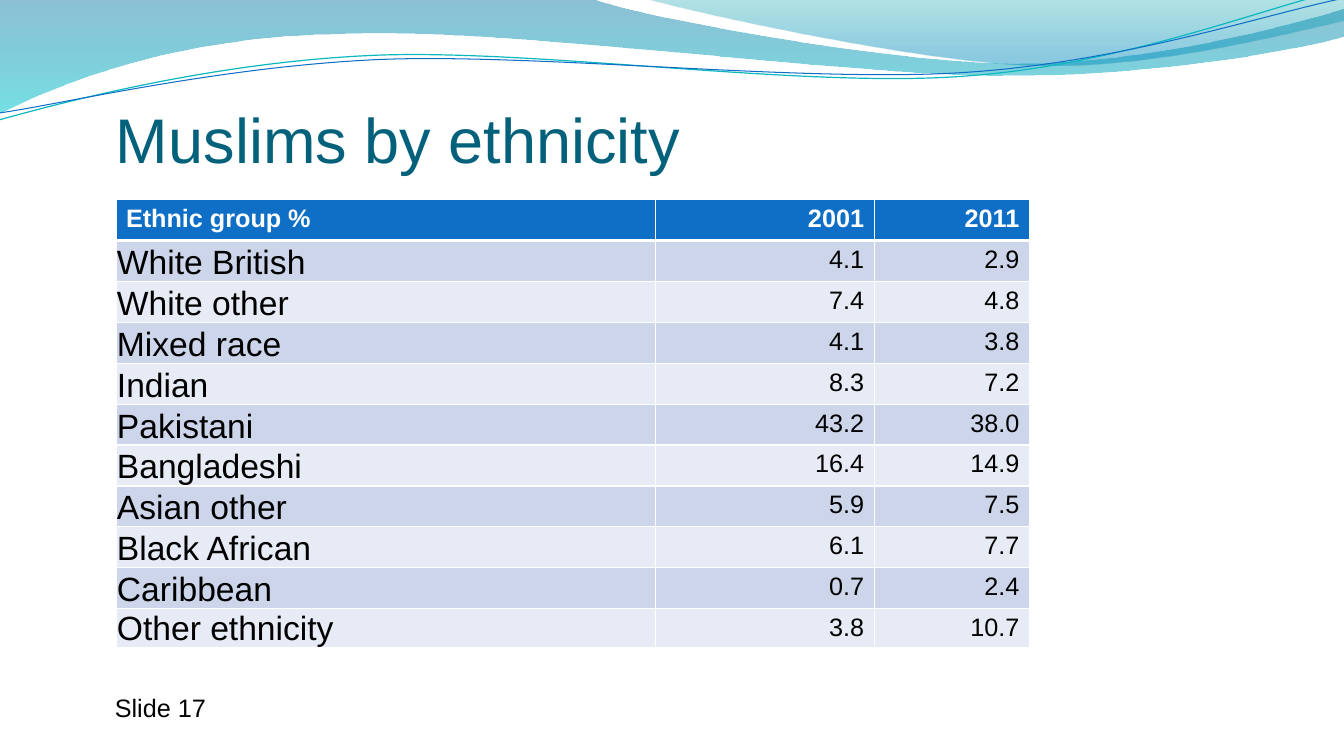
from math import cos, radians, sin

from lxml import etree
from pptx import Presentation
from pptx.dml.color import RGBColor
from pptx.enum.text import MSO_ANCHOR, MSO_AUTO_SIZE, PP_ALIGN
from pptx.oxml import parse_xml
from pptx.oxml.ns import nsdecls, qn
from pptx.util import Pt

PX = 9144
FONT = "Arial"
LEFT, RIGHT = PP_ALIGN.LEFT, PP_ALIGN.RIGHT
TOP, BOTTOM = MSO_ANCHOR.TOP, MSO_ANCHOR.BOTTOM
GROW = MSO_AUTO_SIZE.SHAPE_TO_FIT_TEXT
TILT = 2.7


def rgb(color):
    return RGBColor.from_string(color)


def write(paragraph, text, size, color, bold=False, align=LEFT):
    paragraph.alignment = align
    run = paragraph.add_run()
    run.text = text
    run.font.name = FONT
    run.font.size = Pt(size)
    run.font.bold = bold
    run.font.color.rgb = rgb(color)


deck = Presentation()
deck.slide_width, deck.slide_height = 1333 * PX, 750 * PX
slide = deck.slides.add_slide(deck.slide_layouts[5])

waves = [
    ((0, 0), [
        [(587, -1)],
        [(634, 17), (885, 63), (1011, 63)],
        [(1138, 63), (1278, 26), (1333, 9)],
        [(1335, 36)],
        [(1311, 44), (1160, 76), (994, 75)],
        [(829, 75), (509, 28), (343, 34)],
        [(172, 36), (61, 83), (-1, 113)],
        [(0, 0)],
    ], [(0, "0074A1", 45), (1, "00C6CF", 55)], None, None),
    ((639, -1), [
        [(679, 11), (909, 62), (1025, 65)],
        [(1141, 69), (1282, 32), (1333, 21)],
        [(1333, 0)],
        [(639, -1)],
    ], [(0, "00A1A9", 30), (0.8, "008BBF", 45)], None, None),
    ((-1, 119), [
        [(64, 101), (211, 62), (369, 55)],
        [(527, 48), (790, 87), (950, 76)],
        [(1110, 66), (1252, 8), (1331, -10)],
    ], None, ("0AB8BF", 0.85), (665, 58)),
    ((0, 112), [
        [(63, 103), (218, 66), (378, 59)],
        [(537, 53), (796, 82), (955, 72)],
        [(1115, 62), (1255, 14), (1334, -2)],
    ], None, ("0F6FC6", 0.75), (667, 59)),
]
for start, segments, gradient, stroke, pivot in waves:
    points = [start] + [point for segment in segments for point in segment]
    if pivot:
        turn = radians(TILT)
        offsets = [(x - pivot[0], y - pivot[1]) for x, y in points]
        points = [(pivot[0] + dx * cos(turn) - dy * sin(turn),
                   pivot[1] + dx * sin(turn) + dy * cos(turn)) for dx, dy in offsets]
    points = [(round(x * PX), round(y * PX)) for x, y in points]
    builder = slide.shapes.build_freeform(*points[0])
    builder.add_line_segments(points[1:], close=gradient is not None)
    wave = builder.convert_to_shape()
    wave.shadow.inherit = False

    edges = iter(list(wave.element.iter(qn("a:lnTo"))))
    for segment in segments:
        corners = [next(edges) for point in segment]
        if len(corners) == 3:
            curve = etree.Element(qn("a:cubicBezTo"))
            corners[0].addprevious(curve)
            for corner in corners:
                curve.append(corner[0])
                corner.getparent().remove(corner)

    if gradient:
        wave.fill.gradient()
        wave.fill.gradient_angle = 270
        for stop, (position, color, opacity) in zip(wave.fill.gradient_stops, gradient):
            stop.position = position
            stop.color.rgb = rgb(color)
        for tint, (position, color, opacity) in zip(
                wave.element.spPr.iter(qn("a:srgbClr")), gradient):
            tint.append(parse_xml(f'<a:alpha {nsdecls("a")} val="{opacity * 1000}"/>'))
        wave.line.fill.background()
    else:
        wave.rotation = 360 - TILT
        wave.fill.background()
        wave.line.color.rgb = rgb(stroke[0])
        wave.line.width = Pt(stroke[1])

title = slide.shapes.title
title.left, title.top, title.width, title.height = 115 * PX, 88 * PX, 1200 * PX, 87 * PX
heading = title.text_frame
heading.vertical_anchor = BOTTOM
heading.margin_left = heading.margin_right = heading.margin_bottom = 0
heading.margin_top = 5 * PX
write(heading.paragraphs[0], "Muslims by ethnicity", 45, "04617B")

ethnicity_rows = [
    ("Ethnic group %", "2001", "2011"),
    ("White British", "4.1", "2.9"),
    ("White other", "7.4", "4.8"),
    ("Mixed race", "4.1", "3.8"),
    ("Indian", "8.3", "7.2"),
    ("Pakistani", "43.2", "38.0"),
    ("Bangladeshi", "16.4", "14.9"),
    ("Asian other", "5.9", "7.5"),
    ("Black African", "6.1", "7.7"),
    ("Caribbean", "0.7", "2.4"),
    ("Other ethnicity", "3.8", "10.7"),
]
last_row = len(ethnicity_rows) - 1
table = slide.shapes.add_table(len(ethnicity_rows), 3, 115 * PX, 198 * PX,
                               906 * PX, 451 * PX).table
for column, width in zip(table.columns, (535, 217, 154)):
    column.width = width * PX
for r, values in enumerate(ethnicity_rows):
    header = r == 0
    table.rows[r].height = 36 * PX if r == last_row else 406 * PX // last_row
    for c, value in enumerate(values):
        cell = table.cell(r, c)
        group_name = c == 0 and not header
        cell.vertical_anchor = BOTTOM if group_name else TOP
        if group_name:
            cell.margin_left = cell.margin_right = cell.margin_top = PX
            cell.margin_bottom = 0
        write(cell.text_frame.paragraphs[0], value, 24 if group_name else 18,
              "FFFFFF" if header else "000000", header, RIGHT if c else LEFT)
        cell.fill.solid()
        cell.fill.fore_color.rgb = rgb(
            "0F6FC6" if header else "CCD5EA" if r % 2 else "E7EBF5")
        borders = {"lnL": 1, "lnR": 1, "lnT": 3 if r == 1 else 1, "lnB": 3 if header else 1}
        for position, (side, weight) in enumerate(borders.items()):
            cell._tc.tcPr.insert(position, parse_xml(
                f'<a:{side} {nsdecls("a")} w="{Pt(weight)}"><a:solidFill>'
                f'<a:srgbClr val="FFFFFF"/></a:solidFill></a:{side}>'))

slide_label = slide.shapes.add_textbox(104 * PX, 682 * PX, 118 * PX, 40 * PX).text_frame
slide_label.word_wrap = True
slide_label.auto_size = GROW
write(slide_label.paragraphs[0], "Slide 17", 18, "000000")

deck.save("out.pptx")
